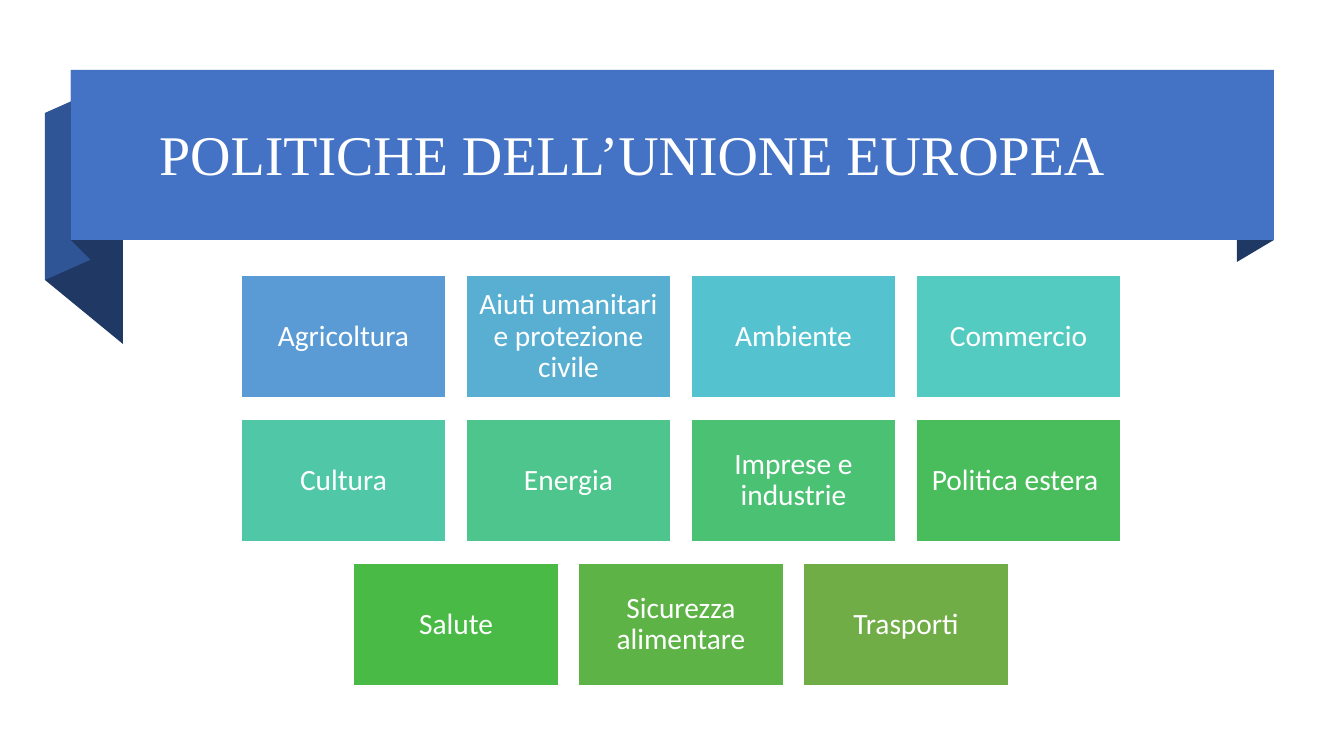
from pptx import Presentation
from pptx.dml.color import RGBColor
from pptx.enum.shapes import MSO_SHAPE
from pptx.enum.text import MSO_ANCHOR, MSO_AUTO_SIZE, PP_ALIGN
from pptx.util import Pt

PX = 914400 / 100.8

WHITE = RGBColor(0xFF, 0xFF, 0xFF)
BANNER_BLUE = RGBColor(0x44, 0x72, 0xC4)
FLAP_BLUE = RGBColor(0x2F, 0x55, 0x97)
FOLD_NAVY = RGBColor(0x20, 0x38, 0x64)

POLICIES = [
    ("Agricoltura", RGBColor(0x5B, 0x9B, 0xD5)),
    ("Aiuti umanitari e protezione civile", RGBColor(0x58, 0xAF, 0xD2)),
    ("Ambiente", RGBColor(0x55, 0xC3, 0xCF)),
    ("Commercio", RGBColor(0x53, 0xCB, 0xC1)),
    ("Cultura", RGBColor(0x50, 0xC8, 0xA7)),
    ("Energia", RGBColor(0x4D, 0xC5, 0x8D)),
    ("Imprese e industrie", RGBColor(0x4B, 0xC1, 0x74)),
    ("Politica estera ", RGBColor(0x49, 0xBD, 0x5B)),
    ("Salute", RGBColor(0x4A, 0xBA, 0x46)),
    ("Sicurezza alimentare", RGBColor(0x5E, 0xB3, 0x47)),
    ("Trasporti", RGBColor(0x70, 0xAD, 0x47)),
]
COLUMNS = 4


def px(length):
    return round(length * PX)


def paint(shape, color):
    shape.shadow.inherit = False
    shape.fill.solid()
    shape.fill.fore_color.rgb = color
    shape.line.fill.background()


def write(shape, text, font_name, size, align):
    frame = shape.text_frame
    frame.text = text
    frame.word_wrap = True
    frame.auto_size = MSO_AUTO_SIZE.NONE
    frame.vertical_anchor = MSO_ANCHOR.MIDDLE
    paragraph = frame.paragraphs[0]
    paragraph.alignment = align
    paragraph.line_spacing = 0.9
    font = paragraph.runs[0].font
    font.name = font_name
    font.size = Pt(size)
    font.color.rgb = WHITE


def add_ribbon(slide, left, top, width, height):
    ribbon = slide.shapes.add_group_shape().shapes
    right_fold = [(width, height), (width - 37, height + 22), (width - 37, 21), (width, 0)]
    left_tail = [(52, height + 104), (-26, height + 40), (-26, 43), (52, 106)]
    left_flap = [(19, height + 20), (-26, height + 40), (-26, 43), (19, 23)]
    inner_fold = [(19, height + 19), (0, height), (0, 0), (19, 20)]
    for outline, color in [
        (right_fold, FOLD_NAVY),
        (left_tail, FOLD_NAVY),
        (left_flap, FLAP_BLUE),
        (inner_fold, FOLD_NAVY),
    ]:
        points = [(left + x, top + y) for x, y in outline]
        builder = ribbon.build_freeform(*points[0], scale=PX)
        builder.add_line_segments(points[1:], close=True)
        paint(builder.convert_to_shape(), color)
    banner = ribbon.add_shape(MSO_SHAPE.RECTANGLE, px(left), px(top), px(width), px(height))
    paint(banner, BANNER_BLUE)


def add_title(slide, left, top, width, height):
    title = slide.shapes.title
    title.left, title.top = px(left), px(top)
    title.width, title.height = px(width), px(height)
    write(title, "POLITICHE DELL’UNIONE EUROPEA", "Times New Roman", 40, PP_ALIGN.LEFT)
    slide.shapes.element.append(title.element)


def add_policy_grid(slide, left, top, width, tile_width, tile_height):
    tiles = slide.shapes.add_group_shape().shapes
    gap_x = (width - COLUMNS * tile_width) / (COLUMNS - 1)
    gap_y = 21
    for index, (policy, color) in enumerate(POLICIES):
        row, column = divmod(index, COLUMNS)
        in_row = min(COLUMNS, len(POLICIES) - row * COLUMNS)
        row_width = in_row * tile_width + (in_row - 1) * gap_x
        x = left + (width - row_width) / 2 + column * (tile_width + gap_x)
        y = top + row * (tile_height + gap_y)
        tile = tiles.add_shape(
            MSO_SHAPE.RECTANGLE, px(x), px(y), px(tile_width), px(tile_height)
        )
        paint(tile, color)
        tile.line.color.rgb = WHITE
        tile.line.width = Pt(1)
        write(tile, policy, "Calibri", 21, PP_ALIGN.CENTER)
        frame = tile.text_frame
        frame.margin_left = frame.margin_right = px(9)
        frame.margin_top = frame.margin_bottom = px(9)


def main():
    presentation = Presentation()
    presentation.slide_width = px(1344)
    presentation.slide_height = px(756)
    slide = presentation.slides.add_slide(presentation.slide_layouts[5])
    add_ribbon(slide, 71, 70, 1203, 170)
    add_title(slide, 149, 84, 1103, 146)
    add_policy_grid(slide, 241, 275, 880, 205, 123)
    presentation.save("out.pptx")


if __name__ == "__main__":
    main()
